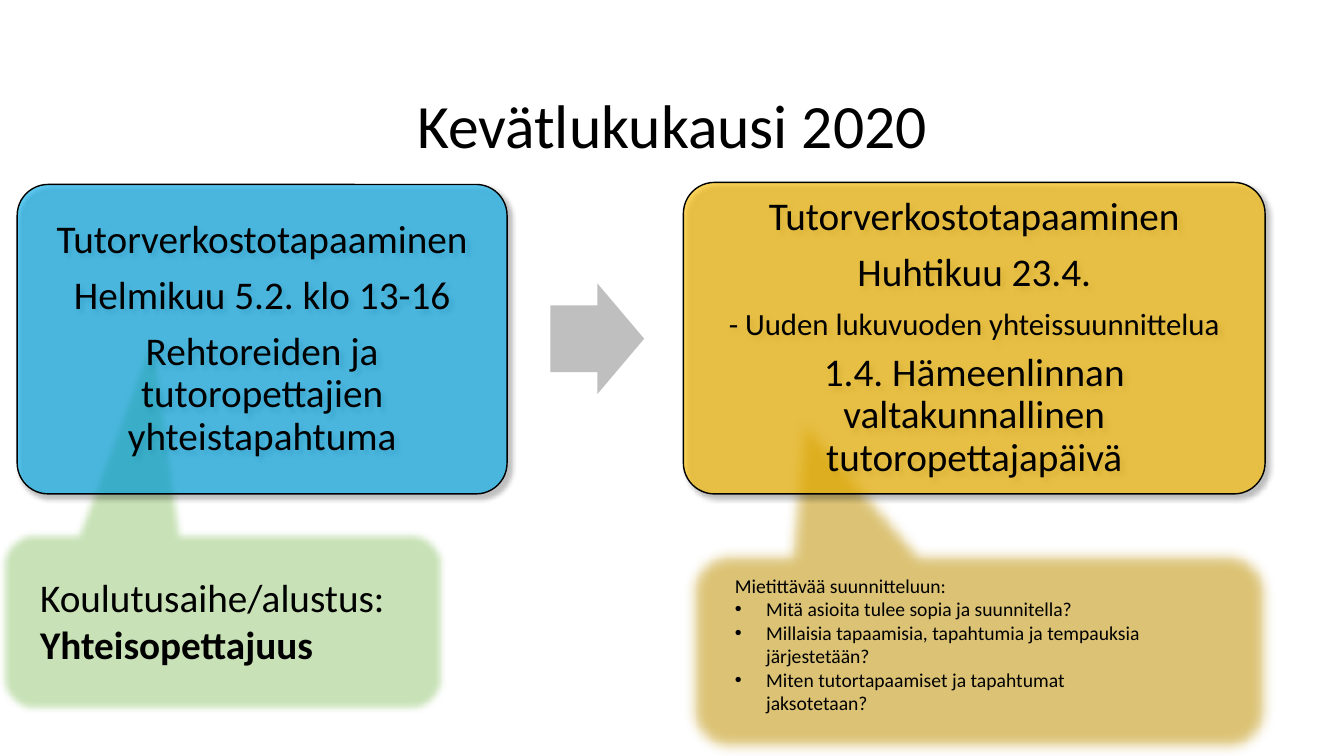
from collections import namedtuple

from lxml.etree import SubElement
from pptx import Presentation
from pptx.dml.color import RGBColor
from pptx.enum.shapes import MSO_SHAPE
from pptx.enum.text import MSO_ANCHOR, MSO_AUTO_SIZE, PP_ALIGN
from pptx.oxml.ns import qn
from pptx.util import Inches, Pt

SLIDE_WIDTH, SLIDE_HEIGHT = Inches(13.33), Inches(7.5)
FONT = "Calibri"
COLORS = {
    "text": "000000",
    "february": "00B0F0",
    "april": "FFC000",
    "arrow": "BFBFBF",
    "topic": "A9D18E",
    "questions": "BF9000",
}
Box = namedtuple("Box", "left top width height")


def area(left, top, width, height):
    """Turn percentages of the slide into a box."""
    return Box(int(SLIDE_WIDTH * left / 100), int(SLIDE_HEIGHT * top / 100),
               int(SLIDE_WIDTH * width / 100), int(SLIDE_HEIGHT * height / 100))


def inside(box, left, top, width, height):
    """Turn shares of a box into a smaller box."""
    return Box(int(box.left + box.width * left), int(box.top + box.height * top),
               int(box.width * width), int(box.height * height))


def move(shape, box):
    shape.left, shape.top, shape.width, shape.height = box


def color(name):
    return RGBColor.from_string(COLORS[name])


def add_filled(slide, preset, box, fill, opacity=100):
    shape = slide.shapes.add_shape(preset, *box)
    shape.shadow.inherit = False
    shape.fill.solid()
    shape.fill.fore_color.rgb = color(fill)
    shape.line.fill.background()
    if opacity < 100:
        tint = shape._element.spPr.find(qn("a:solidFill"))[0]
        SubElement(tint, qn("a:alpha"), val=str(opacity * 1000))
    return shape


def add_effect(shape, tag, **attributes):
    effects = shape._element.spPr.find(qn("a:effectLst"))
    return SubElement(effects, qn(tag), **attributes)


def write(text_frame, lines, size):
    """Fill a frame with one paragraph per line and set the common font."""
    text_frame.text = "\n".join(lines)
    text_frame.word_wrap = True
    for paragraph in text_frame.paragraphs:
        for run in paragraph.runs:
            run.font.name = FONT
            run.font.size = Pt(size)
            run.font.color.rgb = color("text")
    return text_frame.paragraphs


def place_title(slide, box, text):
    title = slide.shapes.title
    move(title, box)
    title.text_frame.vertical_anchor = MSO_ANCHOR.MIDDLE
    paragraph = write(title.text_frame, [text], 44)[0]
    paragraph.alignment = PP_ALIGN.CENTER
    paragraph.line_spacing = 0.9


def add_meeting(slide, box, fill, opacity, lines, small_lines=()):
    card = add_filled(slide, MSO_SHAPE.ROUNDED_RECTANGLE, box, fill, opacity)
    card.adjustments[0] = 0.1
    card.line.color.rgb = color("text")
    card.line.width = Pt(1)
    shadow = add_effect(card, "a:outerShdw", blurRad=str(Pt(4)), dist=str(Pt(3)),
                        dir="2700000", algn="tl", rotWithShape="0")
    shade = SubElement(shadow, qn("a:srgbClr"), val=COLORS["text"])
    SubElement(shade, qn("a:alpha"), val="40000")

    frame = card.text_frame
    frame.vertical_anchor = MSO_ANCHOR.MIDDLE
    frame.margin_left = frame.margin_right = Inches(0.12)
    frame.margin_top = frame.margin_bottom = Inches(0.12)
    for index, paragraph in enumerate(write(frame, lines, 28)):
        paragraph.alignment = PP_ALIGN.CENTER
        paragraph.line_spacing = 0.9
        after = SubElement(paragraph._p.get_or_add_pPr(), qn("a:spcAft"))
        SubElement(after, qn("a:spcPct"), val="35000")
        if index in small_lines:
            paragraph.runs[0].font.size = Pt(22)


def add_callout(slide, box, fill, opacity, tip, softness):
    """Add a soft callout, turned so that its tip points up."""
    callout = add_filled(slide, MSO_SHAPE.ROUNDED_RECTANGULAR_CALLOUT, box, fill, opacity)
    callout.rotation = 180
    callout.adjustments[0], callout.adjustments[1] = tip
    add_effect(callout, "a:softEdge", rad=str(Pt(softness)))


def add_topic(slide, box, lines):
    note = slide.shapes.add_textbox(*inside(box, 0.07, 0.21, 0.89, 0.57))
    paragraphs = write(note.text_frame, lines, 28)
    paragraphs[-1].runs[0].font.bold = True


def place_questions(slide, box, heading, questions):
    body = slide.placeholders[1]
    move(body, inside(box, 0.07, 0.11, 0.74, 0.98))
    body._element.getparent().append(body._element)
    body.text_frame.auto_size = MSO_AUTO_SIZE.NONE
    body.text_frame.vertical_anchor = MSO_ANCHOR.TOP
    for index, paragraph in enumerate(write(body.text_frame, [heading, *questions], 14)):
        paragraph.space_before = Pt(0)
        indent = Inches(0.31) if index else 0
        properties = paragraph._p.get_or_add_pPr()
        properties.set("marL", str(indent))
        properties.set("indent", str(-indent))
        if index:
            SubElement(properties, qn("a:buFont"), typeface="Arial")
            SubElement(properties, qn("a:buChar"), char="•")
        else:
            SubElement(properties, qn("a:buNone"))


def build_slide(presentation):
    slide = presentation.slides.add_slide(presentation.slide_layouts[1])
    topic_box = area(-0.08, 70, 33.3, 24.4)
    questions_box = area(50.85, 72.13, 43.95, 27.87)

    add_callout(slide, topic_box, "topic", 63, (0.15, 1.69), 5)
    add_callout(slide, questions_box, "questions", 54, (0.31, 1.24), 9)
    place_title(slide, area(6.9, 7.33, 86.25, 19.33), "Kevätlukukausi 2020")
    add_meeting(slide, area(1.28, 24.4, 36.45, 40.93), "february", 61, [
        "Tutorverkostotapaaminen",
        "Helmikuu 5.2. klo 13-16",
        "Rehtoreiden ja tutoropettajien yhteistapahtuma",
    ])
    arrow = add_filled(slide, MSO_SHAPE.RIGHT_ARROW, area(40.95, 37.47, 6.98, 14.67), "arrow")
    arrow.adjustments[0] = 0.6
    add_meeting(slide, area(50.85, 24.13, 43.28, 41.2), "april", 64, [
        "Tutorverkostotapaaminen",
        "Huhtikuu 23.4.",
        "- Uuden lukuvuoden yhteissuunnittelua",
        "1.4. Hämeenlinnan valtakunnallinen tutoropettajapäivä",
    ], small_lines=(2,))
    add_topic(slide, topic_box, ["Koulutusaihe/alustus:", "Yhteisopettajuus"])
    place_questions(slide, questions_box, "Mietittävää suunnitteluun:", [
        "Mitä asioita tulee sopia ja suunnitella?",
        "Millaisia tapaamisia, tapahtumia ja tempauksia järjestetään?",
        "Miten tutortapaamiset ja tapahtumat jaksotetaan?",
    ])


def main():
    presentation = Presentation()
    presentation.slide_width, presentation.slide_height = SLIDE_WIDTH, SLIDE_HEIGHT
    build_slide(presentation)
    presentation.save("out.pptx")


if __name__ == "__main__":
    main()
